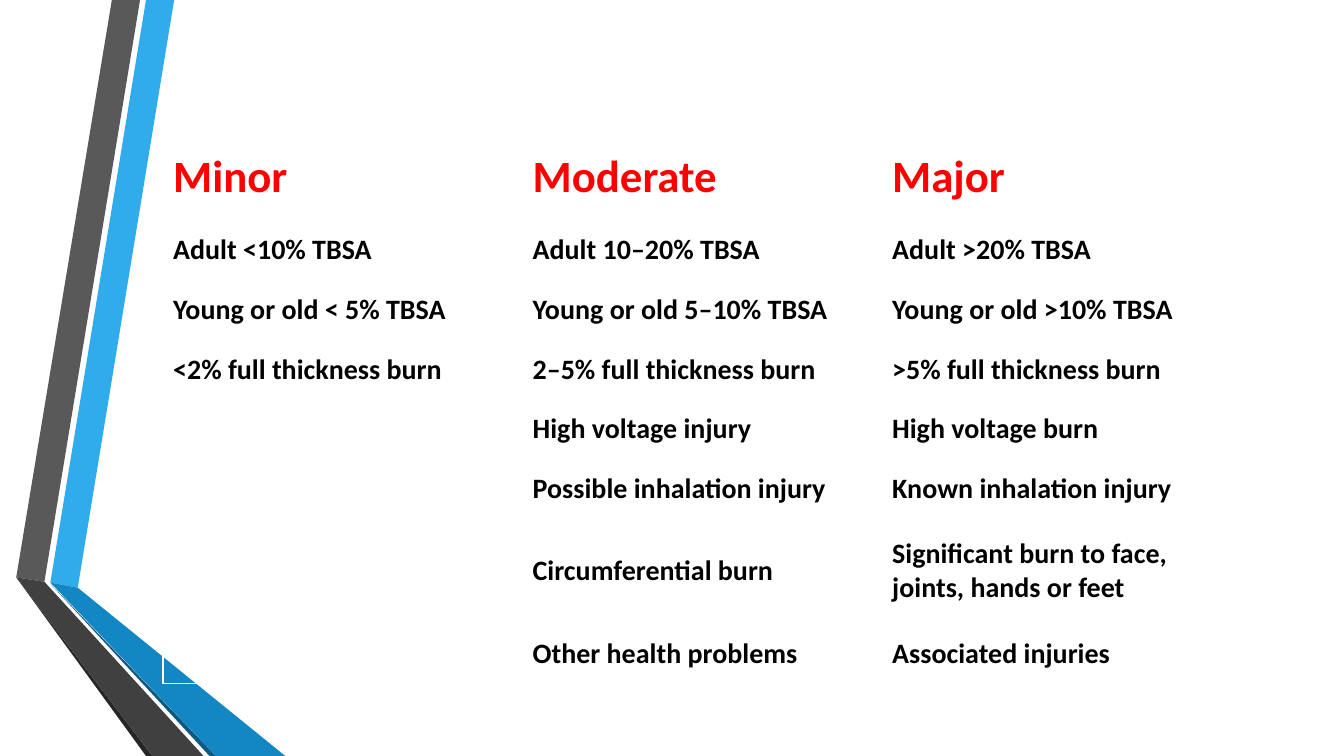
from dataclasses import dataclass

from pptx import Presentation
from pptx import util as u
from pptx.dml.color import RGBColor
from pptx.enum import text


@dataclass(frozen=True)
class Theme:
    font: str = "Calibri"
    head: str = "FF0000"
    body: str = "000000"
    head_size: int = 32
    body_size: int = 20
    blue: str = "30ACEC"
    blue_mid: str = "1287C3"
    blue_deep: str = "0C5A82"
    gray: str = "595959"
    gray_mid: str = "404040"
    gray_deep: str = "262626"


THEME = Theme()
WIDE, HIGH = 33.87, 19.05

# Side ribbon: colour and corner points in cm, back to front
BANDS = [
    (THEME.blue, [(1.27, 14.68), (1.96, 14.81), (4.39, 0), (3.68, 0)]),
    (THEME.gray, [(3.53, 0), (2.82, 0), (0.41, 14.55), (1.12, 14.66)]),
    (THEME.gray_deep, [(0.41, 14.55), (3.68, HIGH), (3.84, HIGH)]),
    (THEME.blue_deep, [(1.27, 14.71), (5.28, HIGH), (5.44, HIGH)]),
    (THEME.blue_mid, [(1.27, 14.68), (5.44, HIGH), (7.19, HIGH),
                      (1.96, 14.81)]),
    (THEME.gray_mid, [(5.13, HIGH), (1.12, 14.66), (0.41, 14.55),
                      (3.84, HIGH)]),
]

# Burn grades: heading row, then criteria
ROWS = [
    ("Minor", "Moderate", "Major"),
    ("Adult <10% TBSA", "Adult 10–20% TBSA", "Adult >20% TBSA"),
    ("Young or old < 5% TBSA", "Young or old 5–10% TBSA",
     "Young or old >10% TBSA"),
    ("<2% full thickness burn", "2–5% full thickness burn",
     ">5% full thickness burn"),
    ("", "High voltage injury", "High voltage burn"),
    ("", "Possible inhalation injury", "Known inhalation injury"),
    ("", "Circumferential burn",
     "Significant burn to face, joints, hands or feet"),
    ("", "Other health problems", "Associated injuries"),
]
LEFT, TOP, COL = 4.11, 3.35, 9.06
LINE = 1.5
TALL = {0: 2.21, 6: 2.67}


def add_band(slide, color, points):
    dots = [(u.Cm(x), u.Cm(y)) for x, y in points]
    pen = slide.shapes.build_freeform(*dots[0])
    pen.add_line_segments(dots[1:], close=True)
    band = pen.convert_to_shape()
    band.shadow.inherit = False
    band.fill.solid()
    band.fill.fore_color.rgb = RGBColor.from_string(color)
    band.line.fill.background()


def put_text(cell, words, *, size, color, bold=True):
    cell.vertical_anchor = text.MSO_ANCHOR.MIDDLE
    if not words:
        return
    run = cell.text_frame.paragraphs[0].add_run()
    run.text = words
    run.font.name = THEME.font
    run.font.size = u.Pt(size)
    run.font.bold = bold
    run.font.color.rgb = RGBColor.from_string(color)


def add_grid(slide, rows):
    highs = [TALL.get(i, LINE) for i in range(len(rows))]
    count = len(rows[0])
    grid = slide.shapes.add_table(
        len(rows), count, u.Cm(LEFT), u.Cm(TOP),
        u.Cm(COL * count), u.Cm(sum(highs))).table
    grid.first_row = grid.horz_banding = False
    for col in grid.columns:
        col.width = u.Cm(COL)
    for i, (row, high) in enumerate(zip(rows, highs)):
        grid.rows[i].height = u.Cm(high)
        size = THEME.body_size if i else THEME.head_size
        color = THEME.body if i else THEME.head
        for j, words in enumerate(row):
            cell = grid.cell(i, j)
            cell.fill.background()
            put_text(cell, words, size=size, color=color)


def main():
    deck = Presentation()
    deck.slide_width, deck.slide_height = u.Cm(WIDE), u.Cm(HIGH)
    # The slide has no title, so the blank layout fits
    slide = deck.slides.add_slide(deck.slide_layouts[6])
    for color, points in BANDS:
        add_band(slide, color, points)
    add_grid(slide, ROWS)
    deck.save("out.pptx")


if __name__ == "__main__":
    main()
